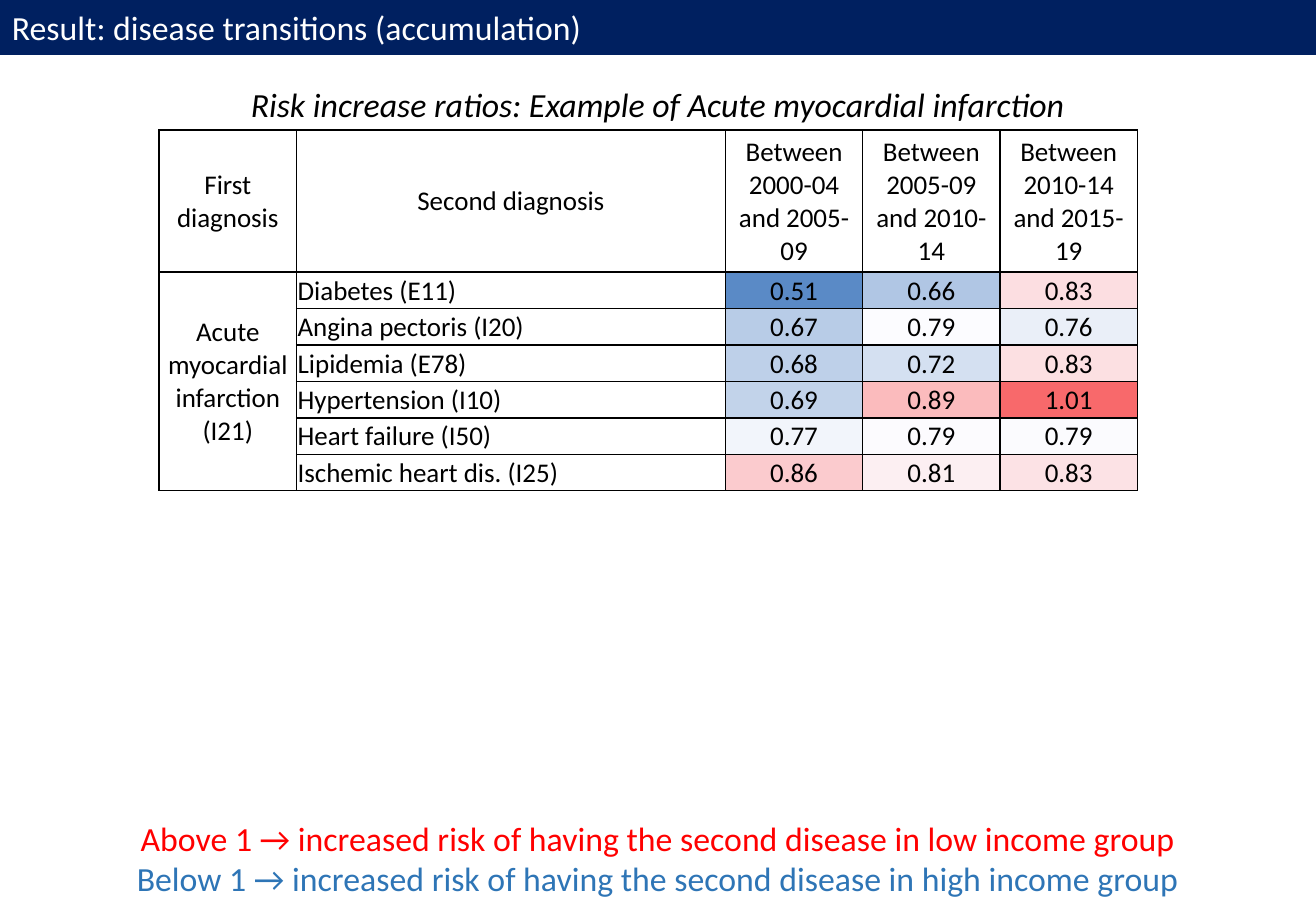
from lxml.etree import SubElement
from pptx import Presentation
from pptx.dml.color import RGBColor
from pptx.enum.shapes import MSO_SHAPE
from pptx.enum.text import MSO_ANCHOR, PP_ALIGN
from pptx.oxml.ns import qn
from pptx.util import Inches, Pt

NAVY = RGBColor(0x00, 0x20, 0x60)
WHITE = RGBColor(0xFF, 0xFF, 0xFF)
BLACK = RGBColor(0x00, 0x00, 0x00)
RED = RGBColor(0xFF, 0x00, 0x00)
BLUE = RGBColor(0x2E, 0x75, 0xB6)
SHADES = [[RGBColor.from_string(code) for code in line.split()] for line in (
    "5A8AC6 B0C6E4 FCDEE1",
    "B8CCE7 FCFCFF EAEFF8",
    "BED0E9 D4E0F1 FCE0E2",
    "C2D3EA FBBBBD F8696B",
    "F2F5FB FCFBFE FBFBFE",
    "FBCBCE FCEFF2 FCE2E5",
)]

WIDE, HIGH = 10.83, 7.5
COLS = [1.13, 3.53, 1.13, 1.13, 1.13]
ROWS = [1.17] + [0.3] * 6
HEAD = [
    "First diagnosis",
    "Second diagnosis",
    "Between 2000-04 and 2005-09",
    "Between 2005-09 and 2010-14",
    "Between 2010-14 and 2015-19",
]
FIRST = "Acute myocardial infarction (I21)"
RATIOS = [
    ("Diabetes (E11)", "0.51", "0.66", "0.83"),
    ("Angina pectoris (I20)", "0.67", "0.79", "0.76"),
    ("Lipidemia (E78)", "0.68", "0.72", "0.83"),
    ("Hypertension (I10)", "0.69", "0.89", "1.01"),
    ("Heart failure (I50)", "0.77", "0.79", "0.79"),
    ("Ischemic heart dis. (I25)", "0.86", "0.81", "0.83"),
]


class Deck:
    font = "Calibri"
    size = 20
    small = 16

    def __init__(self):
        self.show = Presentation()
        self.show.slide_width = Inches(WIDE)
        self.show.slide_height = Inches(HIGH)
        self.slide = self.show.slides.add_slide(self.show.slide_layouts[6])

    def words(self, frame, lines, size, align, slant=False):
        frame.word_wrap = True
        frame.text = "\n".join(text for text, color in lines)
        for para, (text, color) in zip(frame.paragraphs, lines):
            para.alignment = align
            for run in para.runs:
                run.font.name = self.font
                run.font.size = Pt(size)
                run.font.italic = slant
                run.font.color.rgb = color

    def banner(self, text, height):
        bar = self.slide.shapes.add_shape(
            MSO_SHAPE.RECTANGLE, 0, 0, Inches(WIDE), Inches(height))
        bar.shadow.inherit = False
        bar.fill.solid()
        bar.fill.fore_color.rgb = NAVY
        bar.line.color.rgb = NAVY
        bar.line.width = Pt(2.25)
        self.words(bar.text_frame, [(text, WHITE)], self.size, PP_ALIGN.LEFT)

    def label(self, lines, top, height, slant=False):
        box = self.slide.shapes.add_textbox(
            0, Inches(top), Inches(WIDE), Inches(height))
        self.words(box.text_frame, lines, self.size, PP_ALIGN.CENTER, slant)

    def border(self, cell):
        props = cell._tc.get_or_add_tcPr()
        for side in ("a:lnL", "a:lnR", "a:lnT", "a:lnB"):
            edge = SubElement(props, qn(side), w=str(Pt(1)))
            fill = SubElement(edge, qn("a:solidFill"))
            SubElement(fill, qn("a:srgbClr"), val=str(BLACK))

    def fill(self, cell, text, align, shade):
        self.border(cell)
        cell.vertical_anchor = MSO_ANCHOR.MIDDLE
        cell.margin_left = cell.margin_right = cell.margin_top = Inches(0.01)
        cell.margin_bottom = 0
        if shade:
            cell.fill.solid()
            cell.fill.fore_color.rgb = shade
        else:
            cell.fill.background()
        if text:
            self.words(cell.text_frame, [(text, BLACK)], self.small, align)

    def table(self, left, top):
        grid = self.slide.shapes.add_table(
            len(ROWS), len(COLS), Inches(left), Inches(top),
            Inches(sum(COLS)), Inches(sum(ROWS))).table
        for col, width in zip(grid.columns, COLS):
            col.width = Inches(width)
        for row, height in zip(grid.rows, ROWS):
            row.height = Inches(height)
        for col, text in enumerate(HEAD):
            self.fill(grid.cell(0, col), text, PP_ALIGN.CENTER, None)
        for row, (name, *ratios) in enumerate(RATIOS, 1):
            first = FIRST if row == 1 else ""
            self.fill(grid.cell(row, 0), first, PP_ALIGN.CENTER, None)
            self.fill(grid.cell(row, 1), name, PP_ALIGN.LEFT, None)
            for col, (ratio, shade) in enumerate(zip(ratios, SHADES[row - 1]), 2):
                self.fill(grid.cell(row, col), ratio, PP_ALIGN.CENTER, shade)
        grid.cell(1, 0).merge(grid.cell(len(RATIOS), 0))


def main():
    deck = Deck()
    deck.banner("Result: disease transitions (accumulation)", 0.44)
    deck.label([
        ("Above 1 → increased risk of having the second disease in low income group", RED),
        ("Below 1 → increased risk of having the second disease in high income group", BLUE),
    ], 6.68, 0.77)
    deck.label([
        ("Risk increase ratios: Example of Acute myocardial infarction", BLACK),
    ], 0.64, 0.44, slant=True)
    deck.table(1.31, 1.07)
    deck.show.save("out.pptx")


if __name__ == "__main__":
    main()
